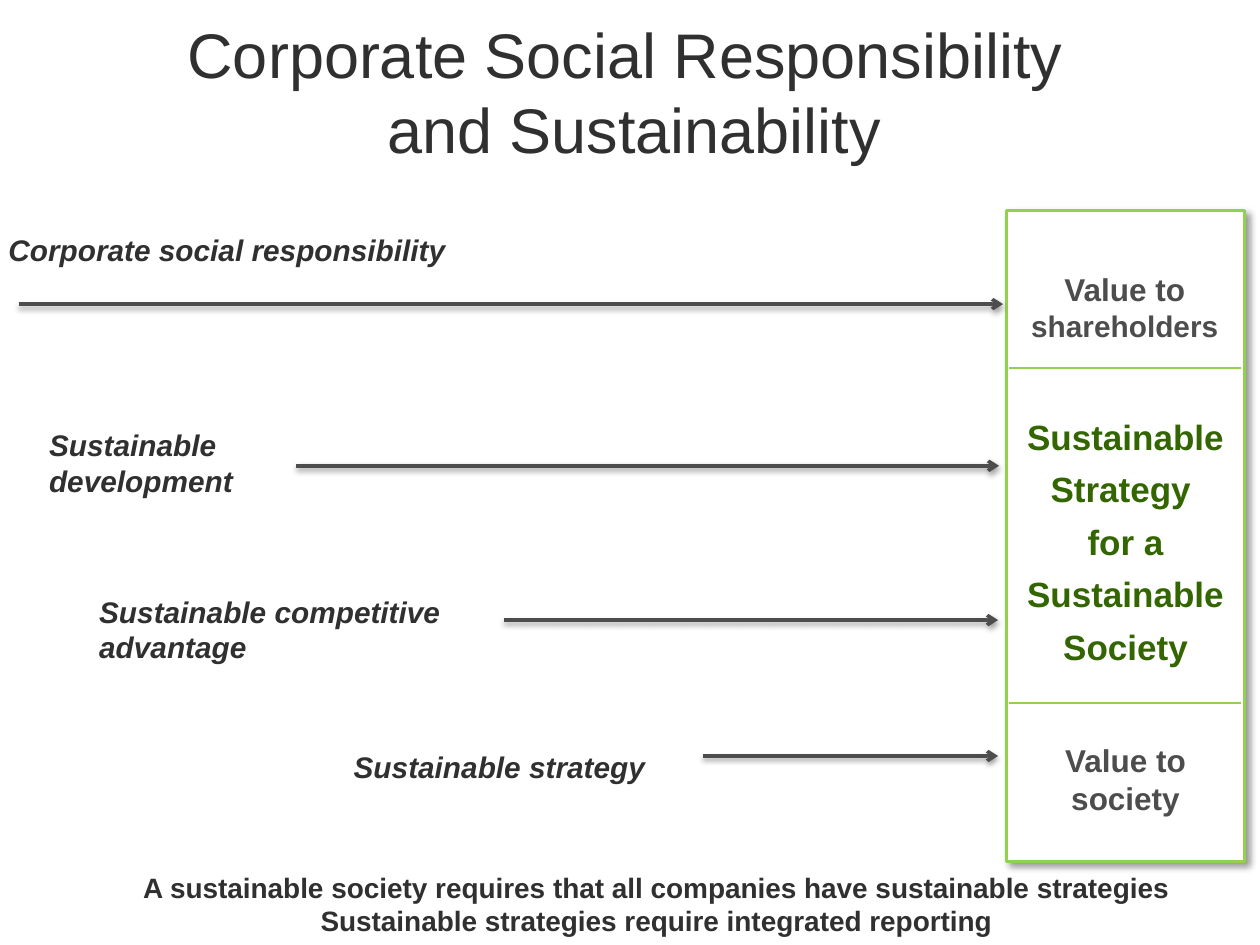
from lxml import etree
from pptx import Presentation
from pptx import util as u
from pptx.dml import color
from pptx.enum import shapes, text
from pptx.oxml import ns

FONT = "Arial"
INK = "303031"
GREY = "4D4D4D"
GREEN = "92D050"
DARK_GREEN = "336600"
WHITE = "FFFFFF"


def rgb(value):
    return color.RGBColor.from_string(value)


class Page:
    def __init__(self, deck):
        self.slide = deck.slides.add_slide(deck.slide_layouts[5])

    def set_text(self, shape, lines, size, ink, bold=True, italic=False,
                 align=text.PP_ALIGN.LEFT, spacing=None):
        frame = shape.text_frame
        frame.text = "\n".join(lines)
        for para in frame.paragraphs:
            para.alignment = align
            para.line_spacing = spacing
            font = para.font
            font.name, font.size = FONT, u.Pt(size)
            font.bold, font.italic = bold, italic
            font.color.rgb = rgb(ink)

    def shadow(self, shape, blur=3.1, distance=1.6, angle=90, alpha=38):
        effects = etree.SubElement(shape._element.spPr, ns.qn("a:effectLst"))
        outer = etree.SubElement(
            effects, ns.qn("a:outerShdw"), blurRad=str(u.Pt(blur)),
            dist=str(u.Pt(distance)), dir=str(angle * 60000), rotWithShape="0")
        tint = etree.SubElement(outer, ns.qn("a:srgbClr"), val="000000")
        etree.SubElement(tint, ns.qn("a:alpha"), val=str(alpha * 1000))

    def title(self, words, left, top, width, height):
        title = self.slide.shapes.title
        title.left, title.top = u.Cm(left), u.Cm(top)
        title.width, title.height = u.Cm(width), u.Cm(height)
        title.text_frame.auto_size = text.MSO_AUTO_SIZE.NONE
        title.text_frame.vertical_anchor = text.MSO_ANCHOR.MIDDLE
        self.set_text(title, [words], 36, INK, bold=False,
                      align=text.PP_ALIGN.CENTER)

    def panel(self, lines, left, top, width, height):
        panel = self.slide.shapes.add_shape(
            shapes.MSO_SHAPE.RECTANGLE, u.Cm(left), u.Cm(top),
            u.Cm(width), u.Cm(height))
        panel.fill.solid()
        panel.fill.fore_color.rgb = rgb(WHITE)
        panel.line.color.rgb = rgb(GREEN)
        panel.line.width = u.Pt(2)
        self.shadow(panel, blur=4, distance=3, angle=45, alpha=40)
        panel.text_frame.vertical_anchor = text.MSO_ANCHOR.MIDDLE
        self.set_text(panel, lines, 20, DARK_GREEN,
                      align=text.PP_ALIGN.CENTER, spacing=1.25)

    def label(self, lines, left, top, width, height, size=17, ink=INK,
              wrap=True, **style):
        box = self.slide.shapes.add_textbox(
            u.Cm(left), u.Cm(top), u.Cm(width), u.Cm(height))
        box.text_frame.word_wrap = wrap
        box.text_frame.auto_size = text.MSO_AUTO_SIZE.SHAPE_TO_FIT_TEXT
        self.set_text(box, lines, size, ink, **style)
        return box

    def line(self, start, end, top, ink, weight):
        line = self.slide.shapes.add_connector(
            shapes.MSO_CONNECTOR.STRAIGHT,
            u.Cm(start), u.Cm(top), u.Cm(end), u.Cm(top))
        line.line.color.rgb = rgb(ink)
        line.line.width = u.Pt(weight)
        return line

    def arrow(self, start, end, top):
        arrow = self.line(start, end, top, GREY, 2)
        outline = arrow._element.spPr.find(ns.qn("a:ln"))
        etree.SubElement(outline, ns.qn("a:tailEnd"), type="arrow")
        self.shadow(arrow)

    def divider(self, start, end, top):
        divider = self.line(start, end, top, GREEN, 0.75)
        etree.SubElement(divider._element.spPr, ns.qn("a:effectLst"))


def main():
    deck = Presentation()
    deck.slide_width, deck.slide_height = u.Cm(25.4), u.Cm(19.05)
    page = Page(deck)
    center = text.PP_ALIGN.CENTER

    page.title("Corporate Social Responsibility \vand Sustainability",
               2.77, 1.12, 20.02, 1.42)
    page.panel(["Sustainable Strategy ", "for a Sustainable Society"],
               20.29, 4.24, 4.8, 13.13)

    for words, left, top, width, height, wrap in [
        ("Corporate social responsibility", -0.08, 4.55, 9.42, 0.99, False),
        ("Sustainable development", 0.74, 8.48, 4.45, 1.7, True),
        ("Sustainable competitive advantage", 1.75, 11.84, 7.82, 1.7, True),
        ("Sustainable strategy", 6.88, 14.96, 6.45, 0.99, False),
    ]:
        page.label([words], left, top, width, height, wrap=wrap, italic=True)

    for start, end, top in [(0.38, 20.22, 6.13), (5.97, 20.14, 9.39),
                            (10.16, 20.12, 12.5), (14.17, 20.12, 15.24)]:
        page.arrow(start, end, top)

    page.label(
        ["A sustainable society requires that all companies have "
         "sustainable strategies",
         "Sustainable strategies require integrated reporting"],
        2.59, 17.42, 21.29, 1.63, size=16, wrap=False, align=center)
    page.label(["Value to society"], 20.57, 14.81, 4.24, 1.8,
               size=18, ink=GREY, align=center)
    shareholders = page.label(["Value to "], 20.45, 5.31, 4.45, 1.75,
                              size=18, ink=GREY, align=center)
    span = shareholders.text_frame.paragraphs[0].add_run()
    span.text = "shareholders"
    span.font.size = u.Pt(17)

    for top in (7.42, 14.17):
        page.divider(20.35, 25.02, top)

    deck.save("out.pptx")


if __name__ == "__main__":
    main()
